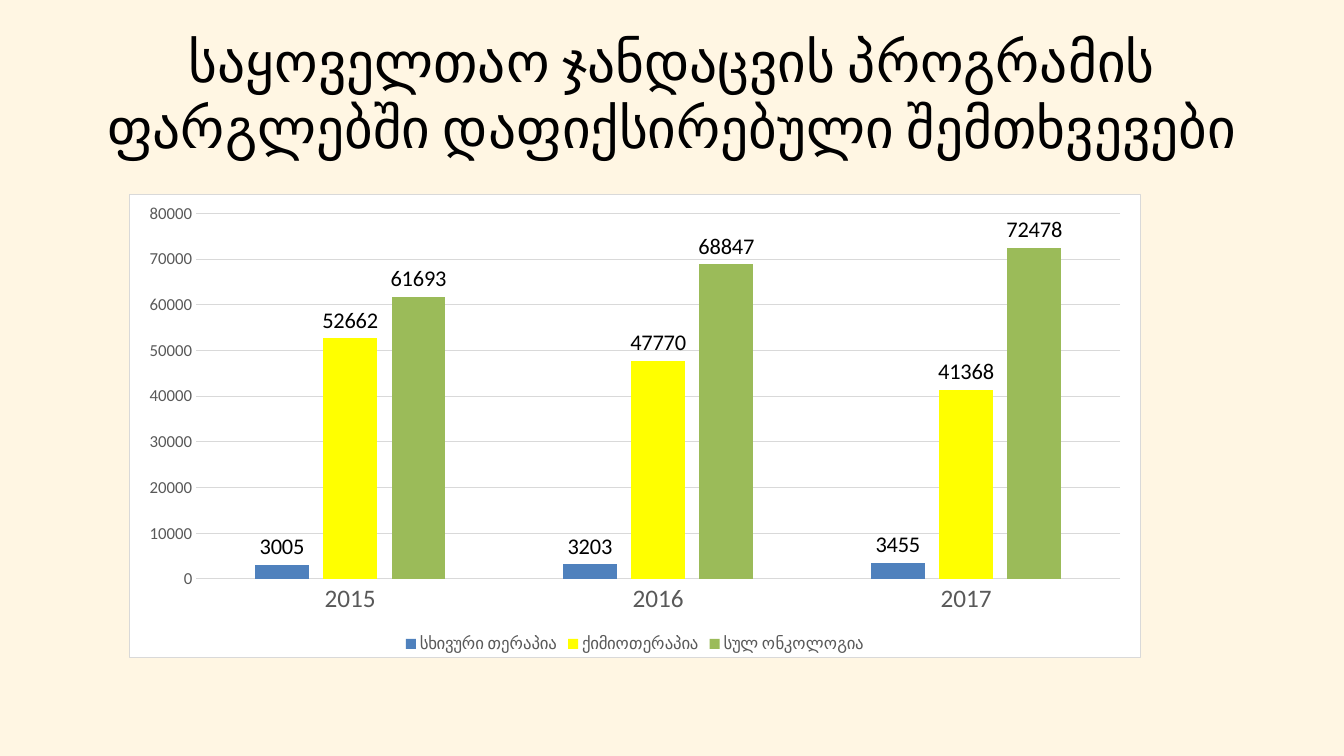
from dataclasses import dataclass

from pptx import Presentation, util as u
from pptx.chart.data import CategoryChartData
from pptx.dml.color import RGBColor
from pptx.enum import chart as ch, text as tx
from pptx.oxml import parse_xml
from pptx.oxml.ns import nsdecls


@dataclass(frozen=True)
class Theme:
    font: str = "Calibri"
    back: str = "FFF6E3"
    panel: str = "FFFFFF"
    ink: str = "000000"
    soft: str = "595959"
    rule: str = "D9D9D9"
    bars: tuple = ("4F81BD", "FFFF00", "9BBB59")
    head: float = 39.6
    cat: int = 18
    label: int = 16
    small: int = 12
    line: float = 0.75


THEME = Theme()
TITLE = "საყოველთაო ჯანდაცვის პროგრამის ფარგლებში დაფიქსირებული შემთხვევები"
YEARS = ("2015", "2016", "2017")
CASES = {
    "სხივური თერაპია": (3005, 3203, 3455),
    "ქიმიოთერაპია": (52662, 47770, 41368),
    "სულ ონკოლოგია": (61693, 68847, 72478),
}


def rgb(code):
    return RGBColor.from_string(code)


def style(font, size, color):
    font.name = THEME.font
    font.size = u.Pt(size)
    font.color.rgb = rgb(color)


def stroke(line):
    line.color.rgb = rgb(THEME.rule)
    line.width = u.Pt(THEME.line)


def add_title(slide, box):
    title = slide.shapes.title
    title.left, title.top, title.width, title.height = box
    frame = title.text_frame
    frame.word_wrap = True
    frame.auto_size = tx.MSO_AUTO_SIZE.NONE
    frame.vertical_anchor = tx.MSO_ANCHOR.MIDDLE
    para = frame.paragraphs[0]
    para.alignment = tx.PP_ALIGN.CENTER
    run = para.add_run()
    run.text = TITLE
    style(run.font, THEME.head, THEME.ink)


def fill_panel(chart):
    # Chart area fill and border
    area = parse_xml(
        f'<c:spPr {nsdecls("c", "a")}>'
        f'<a:solidFill><a:srgbClr val="{THEME.panel}"/></a:solidFill>'
        f'<a:ln w="{u.Pt(THEME.line)}"><a:solidFill>'
        f'<a:srgbClr val="{THEME.rule}"/></a:solidFill></a:ln></c:spPr>'
    )
    chart.element.chart.addnext(area)


def style_axes(chart):
    cat, val = chart.category_axis, chart.value_axis
    for axis, size in ((cat, THEME.cat), (val, THEME.small)):
        axis.major_tick_mark = axis.minor_tick_mark = ch.XL_TICK_MARK.NONE
        style(axis.tick_labels.font, size, THEME.soft)
    stroke(cat.format.line)
    val.format.line.fill.background()
    val.minimum_scale, val.maximum_scale, val.major_unit = 0, 80000, 10000
    val.has_major_gridlines = True
    stroke(val.major_gridlines.format.line)


def style_bars(plot):
    plot.gap_width, plot.overlap = 219, -27
    plot.vary_by_categories = False
    for item, color in zip(plot.series, THEME.bars):
        item.format.fill.solid()
        item.format.fill.fore_color.rgb = rgb(color)
        item.invert_if_negative = False
        labels = item.data_labels
        labels.show_value = True
        labels.position = ch.XL_LABEL_POSITION.OUTSIDE_END
        style(labels.font, THEME.label, THEME.ink)


def add_cases(slide, box):
    data = CategoryChartData()
    data.categories = YEARS
    for name, values in CASES.items():
        data.add_series(name, values)
    kind = ch.XL_CHART_TYPE.COLUMN_CLUSTERED
    chart = slide.shapes.add_chart(kind, *box, data).chart
    chart.has_title = False
    style(chart.font, 10, THEME.ink)
    fill_panel(chart)
    style_axes(chart)
    style_bars(chart.plots[0])
    # Legend
    chart.has_legend = True
    chart.legend.position = ch.XL_LEGEND_POSITION.BOTTOM
    chart.legend.include_in_layout = False
    style(chart.legend.font, THEME.small, THEME.soft)


def main():
    deck = Presentation()
    deck.slide_width, deck.slide_height = u.Cm(33.87), u.Cm(19.05)
    slide = deck.slides.add_slide(deck.slide_layouts[5])
    fill = slide.background.fill
    fill.solid()
    fill.fore_color.rgb = rgb(THEME.back)
    add_title(slide, [u.Cm(n) for n in (1.7, 0.76, 30.48, 3.18)])
    add_cases(slide, [u.Cm(n) for n in (3.25, 4.88, 25.5, 11.71)])
    deck.save("out.pptx")


if __name__ == "__main__":
    main()
